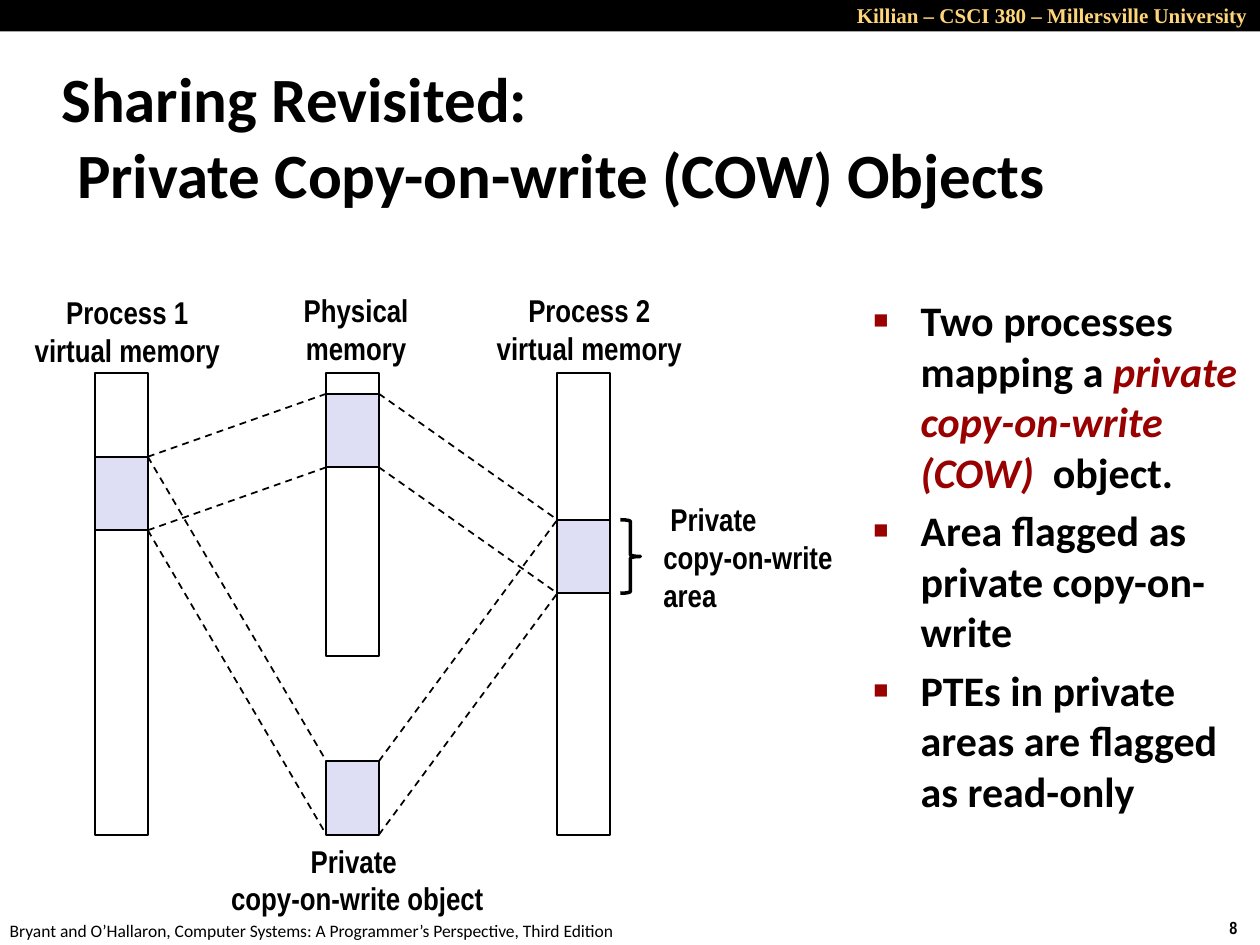
from lxml.etree import SubElement
from pptx import Presentation
from pptx.dml.color import RGBColor
from pptx.enum.dml import MSO_LINE_DASH_STYLE as Dash
from pptx.enum.shapes import MSO_CONNECTOR as Connector, MSO_SHAPE as Shape
from pptx.enum.text import MSO_ANCHOR as Anchor, MSO_AUTO_SIZE as AutoSize, PP_ALIGN as Align
from pptx.oxml.ns import qn
from pptx.util import Pt

COLORS = {
    "black": "000000",
    "gold": "FFD579",
    "red": "990000",
    "lavender": "DEDFF5",
}

deck = Presentation()
deck.slide_width, deck.slide_height = Pt(720), Pt(540)
page = deck.slides.add_slide(deck.slide_layouts[6])


def add_text(place, paragraphs, font, size, color="black", bold=True,
             align=Align.LEFT, anchor=Anchor.TOP, wrap=False):
    box = page.shapes.add_textbox(*map(Pt, place))
    frame = box.text_frame
    layout = {"word_wrap": wrap, "vertical_anchor": anchor, "auto_size": AutoSize.NONE}
    for name, value in layout.items():
        setattr(frame, name, value)
    for index, spans in enumerate(paragraphs):
        para = frame.paragraphs[0] if index == 0 else frame.add_paragraph()
        para.alignment = align
        for words, changes in spans:
            if words == "\n":
                para.add_line_break()
                continue
            span = para.add_run()
            span.text = words
            style = {"name": font, "size": Pt(size), "bold": bold, "italic": False}
            style.update(changes)
            ink = style.pop("ink", color)
            for name, value in style.items():
                setattr(span.font, name, value)
            span.font.color.rgb = RGBColor.from_string(COLORS[ink])
    return frame


def add_block(kind, place, fill=None, line=1):
    block = page.shapes.add_shape(kind, *map(Pt, place))
    block.shadow.inherit = False
    if fill:
        block.fill.solid()
        block.fill.fore_color.rgb = RGBColor.from_string(COLORS[fill])
    else:
        block.fill.background()
    if line:
        block.line.color.rgb = RGBColor.from_string(COLORS["black"])
        block.line.width = Pt(line)
    else:
        block.line.fill.background()


add_block(Shape.RECTANGLE, (0, 0, 720, 18), "black", 0)
add_text((444, -2, 276, 22), [[("Killian – CSCI 380 – Millersville University", {})]],
         "Times New Roman", 12, "gold", align=Align.RIGHT, wrap=True)
add_text((695.5, 520.5, 24.5, 19.5), [[("8", {})]], "Arial Narrow", 10)
add_text((-1.5, 522, 366, 19.5),
         [[("Bryant and O’Hallaron, Computer Systems: A Programmer’s Perspective, Third Edition", {})]],
         "Calibri", 10, bold=False)

headline = [("Sharing Revisited: ", {}), ("\n", {}), ("Private Copy-on-write (COW) Objects", {})]
title = add_text((28, 34.5, 598, 86), [headline], "Calibri", 36, anchor=Anchor.MIDDLE, wrap=True)
for name, value in {"marL": 9, "indent": -9}.items():
    title.paragraphs[0]._p.get_or_add_pPr().set(name, str(Pt(value)))

points = [
    [("Two processes mapping a ", {}),
     ("private copy-on-write (COW)  ", {"ink": "red", "italic": True}),
     ("object.", {})],
    [("Area flagged as private copy-on-write", {})],
    [("PTEs in private areas are flagged as read-only", {})],
]
body = add_text((492, 165, 228, 330), points, "Calibri", 24, wrap=True)
for para in body.paragraphs:
    para.space_before = Pt(4.8)
    props = para._p.get_or_add_pPr()
    for name, value in {"marL": 27, "indent": -27}.items():
        props.set(name, str(Pt(value)))
    SubElement(SubElement(props, qn("a:buClr")), qn("a:srgbClr"), val=COLORS["red"])
    SubElement(props, qn("a:buSzPct"), val="60000")
    SubElement(props, qn("a:buFont"), typeface="Arial")
    SubElement(props, qn("a:buChar"), char="■")

BAR, AREA, TOP = 30, 42, 213
process1, physical, process2 = (54.5 + 132 * column for column in range(3))
memories = [(process1, 264), (physical, 162), (process2, 264)]
areas = {
    "process 1": (process1, 261),
    "physical": (physical, 225),
    "process 2": (process2, 297),
    "object": (physical, 435),
}
for left, height in memories:
    add_block(Shape.RECTANGLE, (left, TOP, BAR, height))
for left, top in areas.values():
    add_block(Shape.RECTANGLE, (left, top, BAR, AREA), "lavender")

mappings = [("process 1", "object"), ("object", "process 2"),
            ("process 1", "physical"), ("physical", "process 2")]
for start, end in mappings:
    (left, start_top), (right, end_top) = areas[start], areas[end]
    for drop in (0, AREA):
        link = page.shapes.add_connector(
            Connector.STRAIGHT, Pt(left + BAR), Pt(start_top + drop), Pt(right), Pt(end_top + drop))
        link.line.color.rgb = RGBColor.from_string(COLORS["black"])
        link.line.width = Pt(1)
        link.line.dash_style = Dash.DASH
        SubElement(link._element.spPr, qn("a:effectLst"))

labels = [
    ((12, 163.5, 121.5, 51), ["Process 1", "virtual memory"], Align.CENTER),
    ((166, 162.5, 75, 51), ["Physical", "memory"], Align.CENTER),
    ((276, 162.5, 121.5, 51), ["Process 2", "virtual memory"], Align.CENTER),
    ((124, 477, 160.5, 51), ["Private ", "copy-on-write object"], Align.CENTER),
    ((372, 282, 114, 72.5), [" Private", "copy-on-write", "area"], Align.LEFT),
]
for place, lines, align in labels:
    add_text(place, [[(line, {})] for line in lines], "Arial Narrow", 18,
             align=align, anchor=Anchor.MIDDLE)
add_block(Shape.RIGHT_BRACE, (354.5, 297, 11.5, AREA), line=2)

deck.save("out.pptx")
